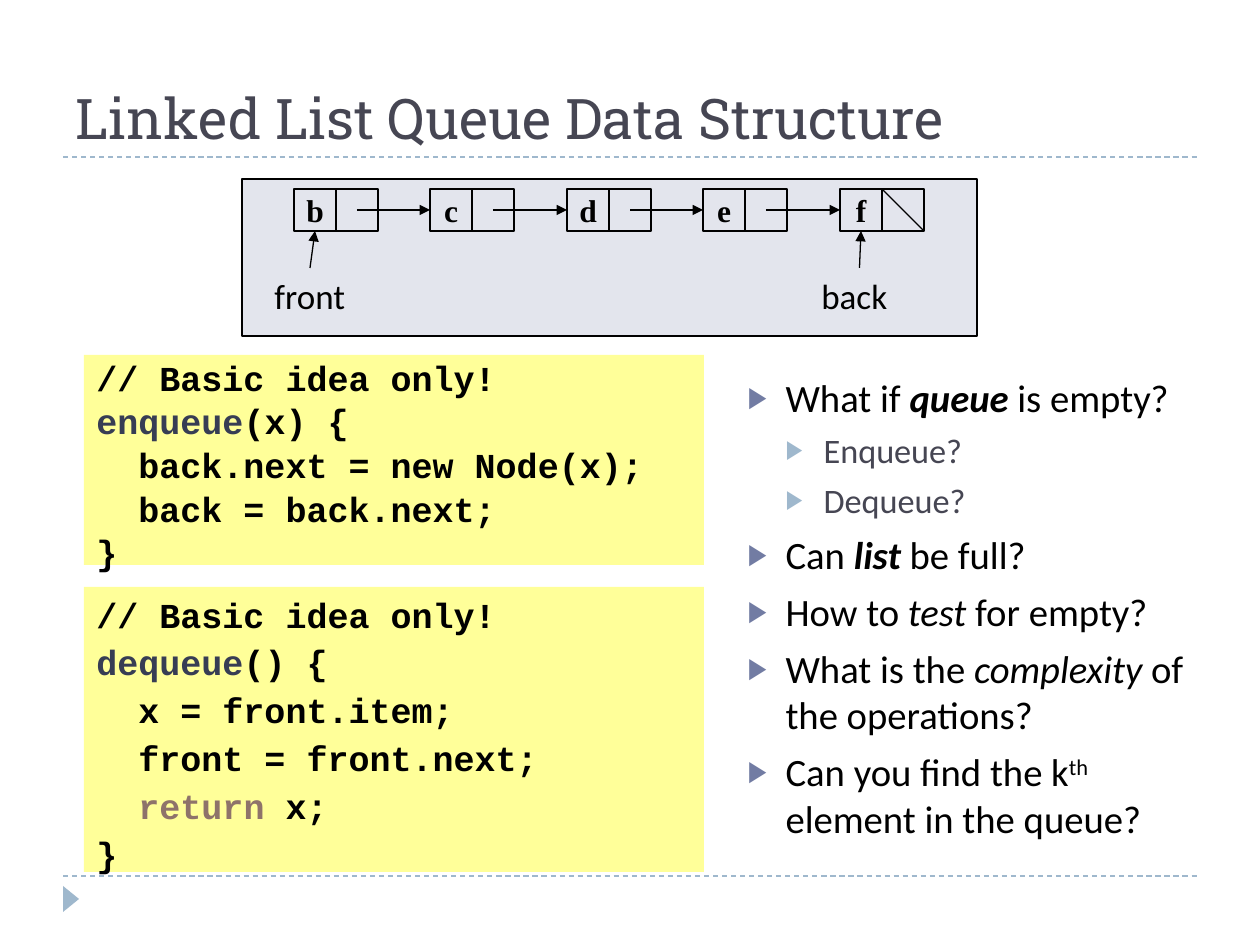
from dataclasses import dataclass

from lxml.etree import SubElement
from pptx import Presentation
from pptx.dml.color import RGBColor
from pptx.enum.dml import MSO_LINE
from pptx.enum.shapes import MSO_CONNECTOR, MSO_SHAPE
from pptx.enum.text import MSO_ANCHOR, MSO_AUTO_SIZE, PP_ALIGN
from pptx.oxml.ns import qn
from pptx.util import Emu, Pt

PX_PER_INCH = 126


@dataclass(frozen=True)
class Theme:
    ink: str = "000000"
    heading: str = "464653"
    accent: str = "9FB8CD"
    bullet: str = "727CA3"
    panel: str = "E3E5ED"
    code_fill: str = "FFFF99"
    function: str = "373D54"
    keyword: str = "8E736A"
    title_font: str = "Roboto Slab"
    body_font: str = "Calibri"
    code_font: str = "Courier New"
    node_font: str = "Times New Roman"
    title_size: float = 32
    list_size: float = 22.1
    sublist_size: float = 19.6
    label_size: float = 20
    code_size: float = 20
    node_size: float = 18
    line_width: float = 0.75


def px(length):
    return Emu(round(length * 914400 / PX_PER_INCH))


def add_span(para, text, *, font, size, color, bold=False, italic=False, raised=False):
    span = para.add_run()
    span.text = text
    span.font.name = font
    span.font.size = Pt(size)
    span.font.color.rgb = RGBColor.from_string(color)
    span.font.bold = bold
    span.font.italic = italic
    if raised:
        span._r.get_or_add_rPr().set("baseline", "30000")


def fill_frame(frame, paragraphs, *, anchor=MSO_ANCHOR.TOP, wrap=True,
               align=PP_ALIGN.LEFT, before=0, spacing=1.0, **style):
    """Write paragraphs, each a list of (text, overrides of the style)."""
    frame.word_wrap = wrap
    frame.auto_size = MSO_AUTO_SIZE.NONE
    frame.vertical_anchor = anchor
    for index, spans in enumerate(paragraphs):
        para = frame.paragraphs[0] if index == 0 else frame.add_paragraph()
        para.alignment = align
        para.space_before = Pt(before)
        para.line_spacing = spacing
        for text, changes in spans:
            add_span(para, text, **{**style, **changes})


def set_bullet(para, color, level):
    step = px(38)
    para.level = level
    properties = para._p.get_or_add_pPr()
    properties.set("marL", str(step * (level + 1)))
    properties.set("indent", str(-step))
    bullet_color = SubElement(properties, qn("a:buClr"))
    SubElement(bullet_color, qn("a:srgbClr"), val=color)
    SubElement(properties, qn("a:buSzPct"), val="76000")
    SubElement(properties, qn("a:buFont"), typeface="Arial")
    SubElement(properties, qn("a:buChar"), char="▶")


class SlideBuilder:
    """Draws elements on one slide in one theme, with lengths in px."""

    def __init__(self, page, theme):
        self.page = page
        self.theme = theme

    def place(self, shape, left, top, width, height):
        shape.left, shape.top = px(left), px(top)
        shape.width, shape.height = px(width), px(height)

    def title(self, text, *bounds):
        theme = self.theme
        box = self.page.shapes.title
        self.place(box, *bounds)
        fill_frame(box.text_frame, [[(text, {})]], anchor=MSO_ANCHOR.BOTTOM,
                   font=theme.title_font, size=theme.title_size, color=theme.heading)

    def bullets(self, items, *bounds):
        """Fill the body with (level, spans) items."""
        theme = self.theme
        box = self.page.placeholders[1]
        self.place(box, *bounds)
        fill_frame(box.text_frame, [spans for _, spans in items], before=6,
                   font=theme.body_font, size=theme.list_size, color=theme.ink)
        for para, (level, _) in zip(box.text_frame.paragraphs, items):
            set_bullet(para, theme.accent if level else theme.bullet, level)
            if level:
                para.space_before = Pt(5)
                for span in para.runs:
                    span.font.size = Pt(theme.sublist_size)
                    span.font.color.rgb = RGBColor.from_string(theme.heading)

    def shape(self, kind, *bounds, fill=None, outline=None):
        shape = self.page.shapes.add_shape(kind, *map(px, bounds))
        shape.shadow.inherit = False
        if fill:
            shape.fill.solid()
            shape.fill.fore_color.rgb = RGBColor.from_string(fill)
        else:
            shape.fill.background()
        if outline:
            shape.line.color.rgb = RGBColor.from_string(outline)
            shape.line.width = Pt(self.theme.line_width)
        else:
            shape.line.fill.background()
        return shape

    def line(self, start, end, color=None, dashed=False, arrow=False):
        line = self.page.shapes.add_connector(
            MSO_CONNECTOR.STRAIGHT, *map(px, (*start, *end)))
        line.line.color.rgb = RGBColor.from_string(color or self.theme.ink)
        line.line.width = Pt(self.theme.line_width)
        if dashed:
            line.line.dash_style = MSO_LINE.DASH
        if arrow:
            SubElement(line.line._get_or_add_ln(), qn("a:tailEnd"), type="triangle")
        SubElement(line._element.spPr, qn("a:effectLst"))
        return line

    def code(self, paragraphs, *bounds, spacing=1.0):
        theme = self.theme
        box = self.shape(MSO_SHAPE.RECTANGLE, *bounds, fill=theme.code_fill)
        fill_frame(box.text_frame, paragraphs, before=3.3, spacing=spacing,
                   font=theme.code_font, size=theme.code_size, color=theme.ink, bold=True)

    def node(self, value, left, top, side):
        """Draw a value cell with its link cell; return the value cell."""
        theme = self.theme
        cell, _ = [self.shape(MSO_SHAPE.RECTANGLE, left + offset, top, side, side,
                              outline=theme.ink) for offset in (0, side)]
        fill_frame(cell.text_frame, [[(value, {})]], anchor=MSO_ANCHOR.MIDDLE,
                   wrap=False, align=PP_ALIGN.CENTER, font=theme.node_font,
                   size=theme.node_size, color=theme.ink, bold=True)
        return cell

    def pointer(self, text, cell, *bounds):
        """Draw a label with an arrow up to the cell."""
        theme = self.theme
        label = self.page.shapes.add_textbox(*map(px, bounds))
        fill_frame(label.text_frame, [[(text, {})]], wrap=False,
                   font=theme.body_font, size=theme.label_size, color=theme.ink)
        arrow = self.line((0, 0), (0, 0), arrow=True)
        arrow.begin_connect(label, 0)
        arrow.end_connect(cell, 2)


def draw_queue(slide, values, left, top, side):
    theme = slide.theme
    slide.shape(MSO_SHAPE.RECTANGLE, 242, 179, 735, 157, fill=theme.panel, outline=theme.ink)
    lefts = [left + 273 * index // 2 for index in range(len(values))]
    cells = [slide.node(value, x, top, side) for value, x in zip(values, lefts)]
    middle = top + side // 2
    for x, next_x, next_cell in zip(lefts, lefts[1:], cells[1:]):
        arrow = slide.line((x + side * 3 // 2, middle), (next_x, middle), arrow=True)
        arrow.end_connect(next_cell, 1)
    slide.line((lefts[-1] + side, top), (lefts[-1] + 2 * side, top + side))
    slide.pointer("front", cells[0], 262, 268, 96, 55)
    slide.pointer("back", cells[-1], 809, 268, 101, 55)


def main():
    deck = Presentation()
    deck.slide_width, deck.slide_height = px(1260), px(945)
    theme = Theme()
    slide = SlideBuilder(deck.slides.add_slide(deck.slide_layouts[1]), theme)

    for y in (876, 157):
        slide.line((63, y), (1197, y), color=theme.accent, dashed=True)
    marker = slide.shape(MSO_SHAPE.ISOSCELES_TRIANGLE, 58, 891, 26, 16, fill=theme.accent)
    marker.rotation = 90
    slide.title("Linked List Queue Data Structure", 63, 21, 1134, 136)

    strong, italic = {"bold": True, "italic": True}, {"italic": True}
    slide.bullets([
        (0, [("What if ", {}), ("queue", strong), (" is empty?", {})]),
        (1, [("Enqueue?", {})]),
        (1, [("Dequeue?", {})]),
        (0, [("Can ", {}), ("list", strong), (" be full?", {})]),
        (0, [("How to ", {}), ("test", italic), (" for empty?", {})]),
        (0, [("What is the ", {}), ("complexity", italic), (" of the operations?", {})]),
        (0, [("Can you find the k", {}), ("th", {"raised": True}),
             (" element in the queue?", {})]),
    ], 735, 368, 494, 494)

    draw_queue(slide, "bcdef", 294, 189, 42)

    function, keyword = {"color": theme.function}, {"color": theme.keyword}
    comment = [("// Basic idea only!", {})]
    closing = [("}", {})]
    slide.code([comment, [("enqueue", function), ("(x) {", {})],
                [("  back.next = new Node(x);", {})],
                [("  back = back.next;", {})], closing],
               84, 355, 620, 210, spacing=0.9)
    slide.code([comment, [("dequeue", function), ("() {", {})],
                [("  x = front.item;", {})], [("  front = front.next;", {})],
                [("  ", {}), ("return", keyword), (" x;", {})], closing],
               84, 587, 620, 285)
    deck.save("out.pptx")


if __name__ == "__main__":
    main()
